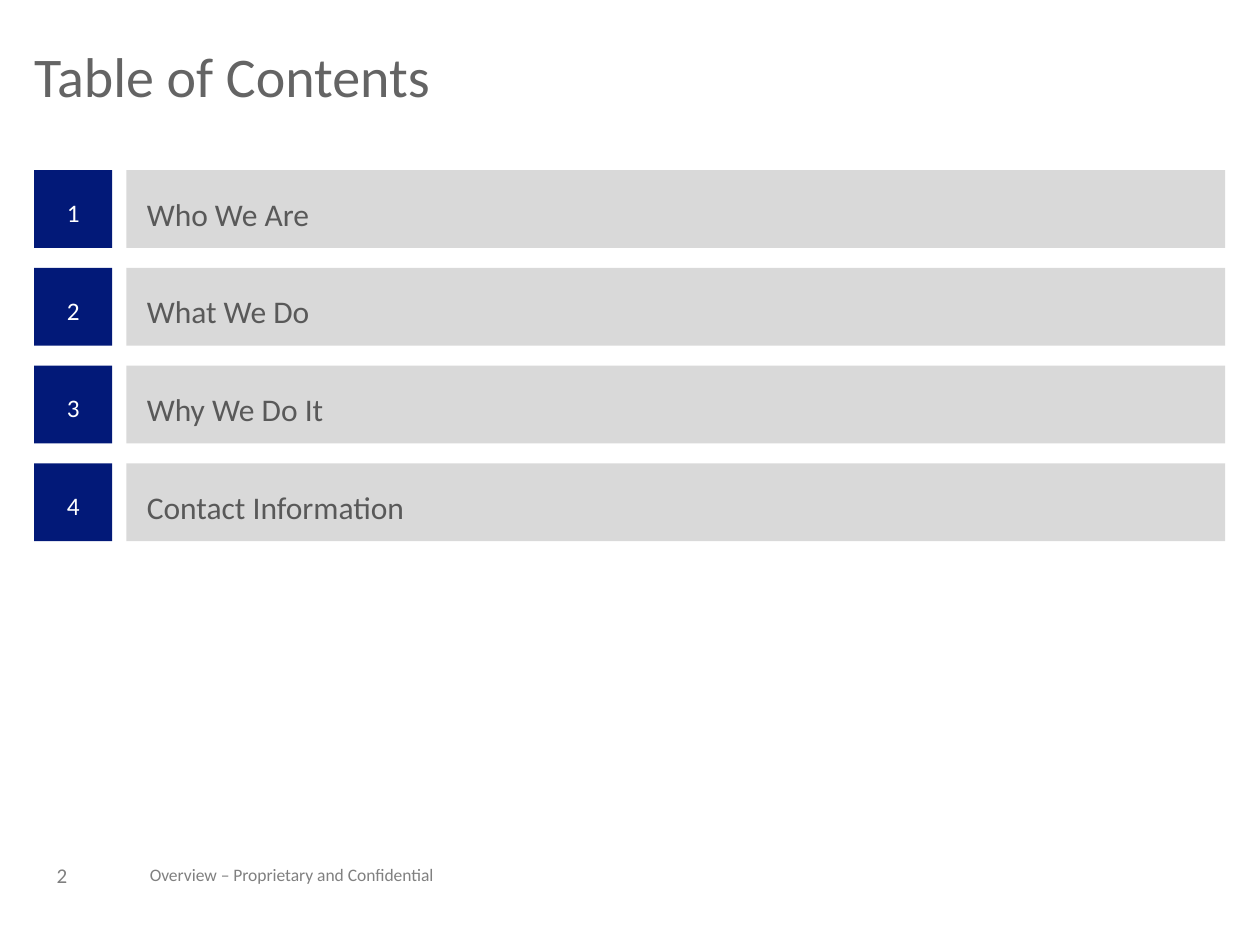
from dataclasses import dataclass

import pptx
import pptx.util
import pptx.dml.color
import pptx.enum.shapes
import pptx.enum.text

Cm = pptx.util.Cm
Align = pptx.enum.text.PP_ALIGN

COLORS = {
    "navy": "021978",
    "bar": "D9D9D9",
    "white": "FFFFFF",
    "label": "595959",
    "title": "646464",
    "foot": "808080",
}
TOPICS = ["Who We Are", "What We Do", "Why We Do It", "Contact Information"]
TOP, PITCH, SIDE = 3.43, 1.97, 1.57


@dataclass
class Style:
    left: float
    width: float
    fill: str
    color: str
    pads: tuple[float, float, float, float]
    align: Align
    lead: float
    small: bool


BADGE = Style(0.69, SIDE, "navy", "white", (0.41, 0.3, 0.41, 0.2),
              Align.CENTER, 0.95, True)
BAR = Style(2.55, 22.15, "bar", "label", (0.41, 0.41, 0.41, 0.3),
            Align.LEFT, 1.1, False)


def tint(name: str) -> pptx.dml.color.RGBColor:
    return pptx.dml.color.RGBColor.from_string(COLORS[name])


def write(frame, text: str, size: float, color: str, pads: tuple):
    """Fill a frame with one styled paragraph and return it."""
    frame.word_wrap = True
    frame.vertical_anchor = pptx.enum.text.MSO_ANCHOR.MIDDLE
    (frame.margin_left, frame.margin_top,
     frame.margin_right, frame.margin_bottom) = map(Cm, pads)
    para = frame.paragraphs[0]
    para.text = text
    para.alignment = Align.LEFT
    para.font.name = "Calibri"
    para.font.size = pptx.util.Pt(size)
    para.font.color.rgb = tint(color)
    return para


def block(slide, style: Style, top: float, text: str) -> None:
    shape = slide.shapes.add_shape(
        pptx.enum.shapes.MSO_SHAPE.RECTANGLE,
        Cm(style.left), Cm(top), Cm(style.width), Cm(SIDE))
    shape.shadow.inherit = False
    shape.fill.solid()
    shape.fill.fore_color.rgb = tint(style.fill)
    shape.line.fill.background()
    para = write(shape.text_frame, text, 18, style.color, style.pads)
    para.alignment = style.align
    para.line_spacing = style.lead
    para.space_after = pptx.util.Pt(6)
    if style.small:
        para._p.pPr.defRPr.set("cap", "small")


def note(slide, box: tuple, text: str, size: float) -> None:
    frame = slide.shapes.add_textbox(*map(Cm, box)).text_frame
    write(frame, text, size, "foot", (0.25, 0.13, 0.25, 0.13))


def main() -> None:
    deck = pptx.Presentation()
    deck.slide_width, deck.slide_height = Cm(25.4), Cm(19.05)
    slide = deck.slides.add_slide(deck.slide_layouts[5])

    # Title
    title = slide.shapes.title
    title.left, title.top = Cm(0.69), Cm(0.66)
    title.width, title.height = Cm(24.05), Cm(1.7)
    write(title.text_frame, "Table of Contents", 32, "title", (0, 0, 0, 0))

    # Numbered topics
    for index, topic in enumerate(TOPICS):
        top = TOP + index * PITCH
        block(slide, BADGE, top, str(index + 1))
        block(slide, BAR, top, topic)

    # Footer
    note(slide, (0.89, 17.15, 1.88, 0.99), "2", 12)
    note(slide, (2.77, 17.12, 14.86, 1.02),
         "Overview – Proprietary and Confidential", 10)

    deck.save("out.pptx")


if __name__ == "__main__":
    main()
